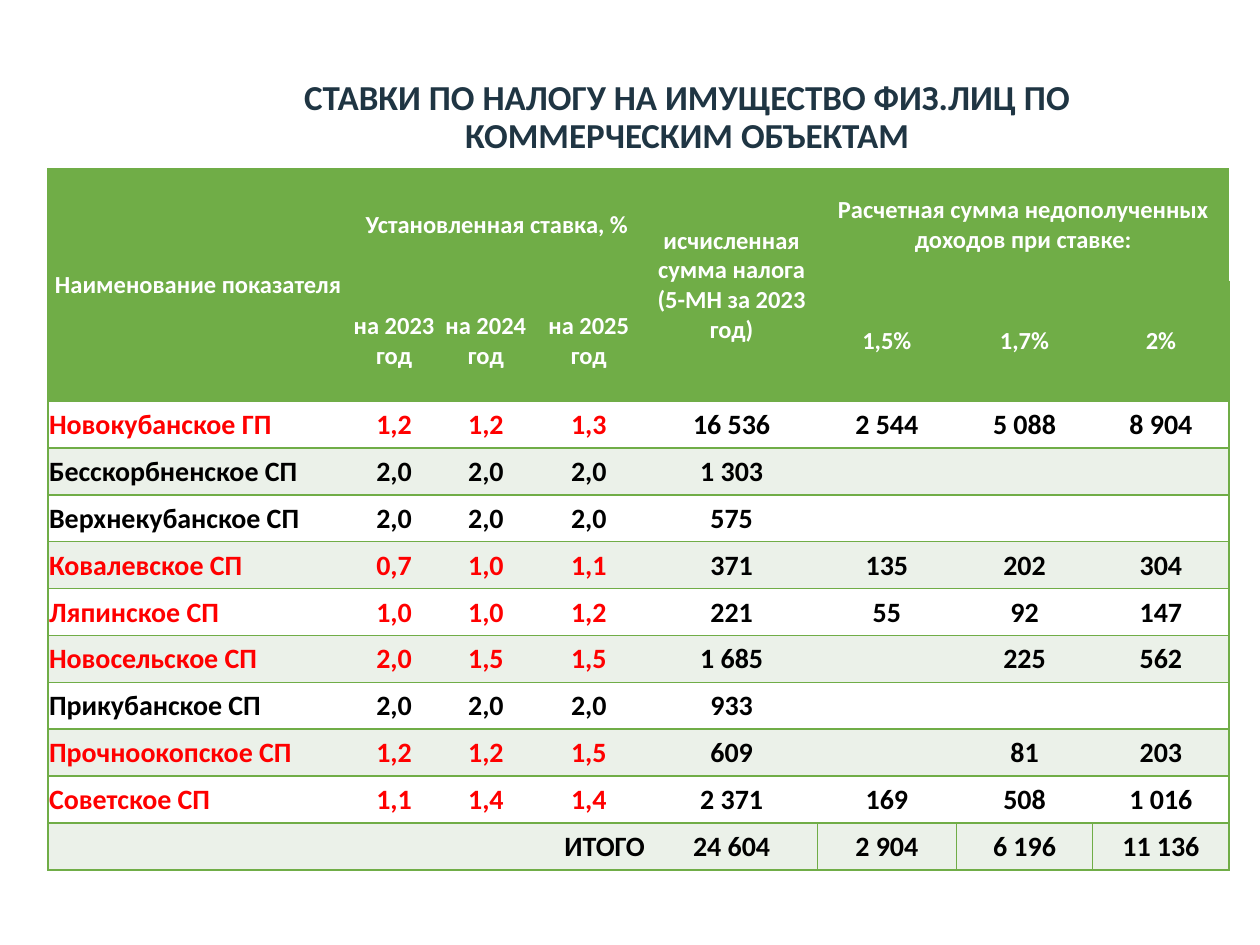
from lxml import etree
from pptx import Presentation
from pptx.dml.color import RGBColor
from pptx.enum import text as t
from pptx.oxml.ns import qn
from pptx.util import Cm, Pt

HUES = {"green": "70AD47", "pale": "EBF1E9", "white": "FFFFFF",
        "red": "FF0000", "black": "000000", "navy": "1F3543"}
MID = t.MSO_ANCHOR.MIDDLE
ALIGN = t.PP_ALIGN


def write(par, words, size, hue, align):
    par.alignment = align
    if not words:
        return
    run = par.add_run()
    run.text = words
    look = {"name": "Calibri", "size": Pt(size), "bold": True}
    for key, val in look.items():
        setattr(run.font, key, val)
    run.font.color.rgb = RGBColor.from_string(HUES[hue])


def edge(cell, side, shown):
    line = etree.SubElement(cell._tc.get_or_add_tcPr(), qn("a:ln" + side),
                            w=str(Pt(1) if shown else 0))
    if shown:
        fill = etree.SubElement(line, qn("a:solidFill"))
        etree.SubElement(fill, qn("a:srgbClr"), val=HUES["green"])
    else:
        etree.SubElement(line, qn("a:noFill"))


# Page
prs = Presentation()
prs.slide_width, prs.slide_height = Cm(25.4), Cm(19.05)
slide = prs.slides.add_slide(prs.slide_layouts[5])

# Title
title = slide.shapes.title
place = {"left": Cm(3.68), "top": Cm(0.99), "width": Cm(20.35), "height": Cm(2.77)}
for key, val in place.items():
    setattr(title, key, val)
frame = {"vertical_anchor": MID, "word_wrap": True, "auto_size": t.MSO_AUTO_SIZE.NONE}
for key, val in frame.items():
    setattr(title.text_frame, key, val)
head = title.text_frame.paragraphs[0]
write(head, "СТАВКИ ПО НАЛОГУ НА ИМУЩЕСТВО ФИЗ.ЛИЦ ПО КОММЕРЧЕСКИМ ОБЪЕКТАМ",
      20, "navy", ALIGN.CENTER)
head.line_spacing = 0.9

# Table contents: two header rows, settlements, total
rows = [
    ["Наименование показателя", "Установленная ставка, %", "", "",
     "исчисленная сумма налога (5-МН за 2023 год)",
     "Расчетная сумма недополученных доходов при ставке:", "", ""],
    ["", "на 2023 год", "на 2024 год", "на 2025 год", "", "1,5%", "1,7%", "2%"],
    ["Новокубанское ГП", "1,2", "1,2", "1,3", "16 536", "2 544", "5 088", "8 904"],
    ["Бесскорбненское СП", "2,0", "2,0", "2,0", "1 303", "", "", ""],
    ["Верхнекубанское СП", "2,0", "2,0", "2,0", "575", "", "", ""],
    ["Ковалевское СП", "0,7", "1,0", "1,1", "371", "135", "202", "304"],
    ["Ляпинское СП", "1,0", "1,0", "1,2", "221", "55", "92", "147"],
    ["Новосельское СП", "2,0", "1,5", "1,5", "1 685", "", "225", "562"],
    ["Прикубанское СП", "2,0", "2,0", "2,0", "933", "", "", ""],
    ["Прочноокопское СП", "1,2", "1,2", "1,5", "609", "", "81", "203"],
    ["Советское СП", "1,1", "1,4", "1,4", "2 371", "169", "508", "1 016"],
    ["ИТОГО", "", "", "", "24 604", "2 904", "6 196", "11 136"],
]
wide = [6.05, 1.85, 1.85, 2.3, 3.46, 2.8, 2.75, 2.75]
high = [2.26, 1.9] + [0.945] * 10
last = len(rows) - 1

# Table grid
grid = slide.shapes.add_table(len(rows), len(wide), Cm(0.97), Cm(3.4),
                              Cm(sum(wide)), Cm(sum(high))).table
grid.first_row = grid.horz_banding = False
for col, size in zip(grid.columns, wide):
    col.width = Cm(size)
for row, size in zip(grid.rows, high):
    row.height = Cm(size)

# Merged cells: first and last corner
for start, end in [((0, 0), (1, 0)), ((0, 1), (0, 3)), ((0, 4), (1, 4)),
                   ((0, 5), (0, 7)), ((last, 0), (last, 3))]:
    grid.cell(*start).merge(grid.cell(*end))

# Cells: a settlement with lost income has its name and rates in red
pad = {"margin_left": Cm(0.02), "margin_right": Cm(0.02), "margin_top": Cm(0.02),
       "margin_bottom": 0, "vertical_anchor": MID}
for r, row in enumerate(rows):
    for c, words in enumerate(row):
        cell = grid.cell(r, c)
        for key, val in pad.items():
            setattr(cell, key, val)
        lines = {0, len(wide)} | ({5, 6, 7} if r == last else set())
        edge(cell, "L", c in lines)
        edge(cell, "R", c + 1 in lines)
        edge(cell, "T", r in (0, 2) or r > 2)
        edge(cell, "B", r > 0)
        if r < 2:
            back, hue, size = "green", "white", 14
        else:
            lost = r < last and c < 4 and row[-1]
            back = "pale" if r % 2 else "white"
            hue, size = "red" if lost else "black", 16
        cell.fill.solid()
        cell.fill.fore_color.rgb = RGBColor.from_string(HUES[back])
        align = ALIGN.CENTER
        if c == 0 and r >= 2:
            align = ALIGN.RIGHT if r == last else ALIGN.LEFT
        write(cell.text_frame.paragraphs[0], words, size, hue, align)

# Title lies over the table
title.element.getparent().append(title.element)

prs.save("out.pptx")
